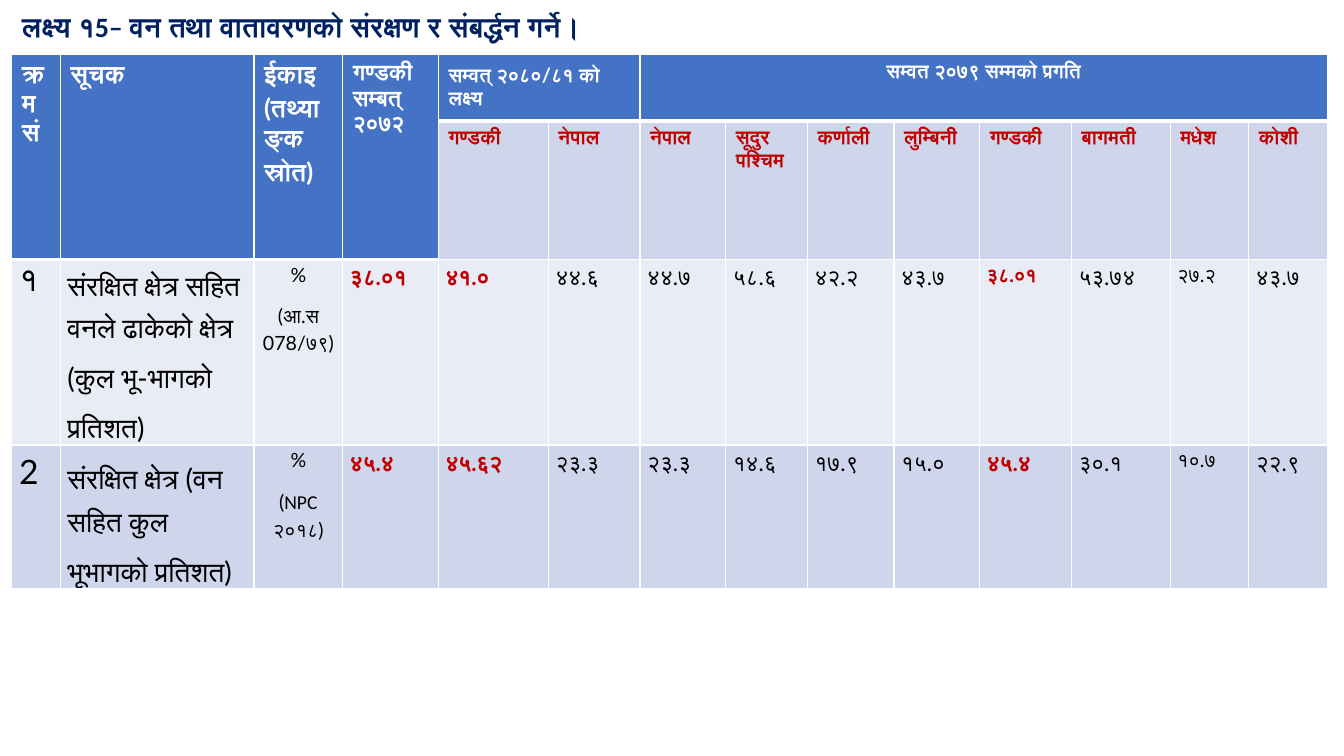
from lxml.etree import SubElement
from pptx import Presentation
from pptx.dml.color import RGBColor
from pptx.enum.text import PP_ALIGN
from pptx.oxml.ns import qn
from pptx.util import Cm, Pt

WHITE = RGBColor(0xFF, 0xFF, 0xFF)
BLACK = RGBColor(0x00, 0x00, 0x00)
NAVY = RGBColor(0x00, 0x20, 0x60)
RED = RGBColor(0xC0, 0x00, 0x00)
BLUE = RGBColor(0x44, 0x72, 0xC4)
BAND_LIGHT = RGBColor(0xE9, 0xEB, 0xF5)
BAND_DARK = RGBColor(0xCF, 0xD5, 0xEA)

TITLE = "लक्ष्य १5– वन तथा वातावरणको संरक्षण र संबर्द्धन गर्ने।"
COL_WIDTHS = [1.22, 4.88, 2.24, 2.41, 2.77, 2.31, 2.16,
              2.06, 2.18, 2.16, 2.31, 2.49, 1.98, 1.98]
ROW_HEIGHTS = [1.68, 3.49, 4.64, 3.6]
# column, last row, last column, size, text
HEADERS = [
    (0, 1, 0, 18, "क्रमसं"),
    (1, 1, 1, 18, "सूचक"),
    (2, 1, 2, 18, "ईकाइ (तथ्याङ्क स्रोत)"),
    (3, 1, 3, 16, "गण्डकी सम्बत् २०७२"),
    (4, 0, 5, 14, "सम्वत् २०८०/८१ को लक्ष्य"),
    (6, 0, 13, 14, "सम्वत २०७९ सम्मको प्रगति"),
]
PROVINCES = ["गण्डकी", "नेपाल", "नेपाल", "सूदुर पश्चिम", "कर्णाली",
             "लुम्बिनी", "गण्डकी", "बागमती", "मधेश", "कोशी"]
# number, indicator, unit paragraphs, values
INDICATORS = [
    ("१", "संरक्षित क्षेत्र सहित वनले ढाकेको क्षेत्र (कुल भू-भागको प्रतिशत)",
     ["%", "(आ.स 078/७९)"],
     ["३८.०१", "४१.०", "४४.६", "४४.७", "५८.६", "४२.२",
      "४३.७", "३८.०१", "५३.७४", "२७.२", "४३.७"]),
    ("2", "संरक्षित क्षेत्र (वन सहित कुल भूभागको प्रतिशत)",
     ["%", [("(", "Lato"), ("NPC", "Calibri"), (" २०१८)", "Lato")]],
     ["४५.४", "४५.६२", "२३.३", "२३.३", "१४.६", "१७.९",
      "१५.०", "४५.४", "३०.१", "१०.७", "२२.९"]),
]
GANDAKI_COLS = (3, 4, 10)
MADHESH_COL = 12


class SlideBuilder:
    para_format = {"line_spacing": 1.15, "space_after": Pt(10)}
    body_margins = {"margin_left": Cm(0.18), "margin_right": Cm(0.18),
                    "margin_top": 0, "margin_bottom": 0}

    def __init__(self, prs):
        self.s = prs.slides.add_slide(prs.slide_layouts[6])

    def fill_text(self, tf, paragraphs, size, color, bold=False, font="Lato", **para):
        """Fill tf; a paragraph is a string or a list of (text, font) runs."""
        tf.word_wrap = True
        for i, runs in enumerate(paragraphs):
            p = tf.add_paragraph() if i else tf.paragraphs[0]
            for name, value in {**self.para_format, **para}.items():
                setattr(p, name, value)
            for text, face in [(runs, font)] if isinstance(runs, str) else runs:
                r = p.add_run()
                r.text = text
                values = {"name": face, "size": Pt(size), "bold": bold}
                for name, value in values.items():
                    setattr(r.font, name, value)
                r.font.color.rgb = color

    def text(self, left, top, width, height, text, **style):
        sp = self.s.shapes.add_textbox(Cm(left), Cm(top), Cm(width), Cm(height))
        self.fill_text(sp.text_frame, [text], **style)

    def table(self, left, top, col_widths, row_heights):
        sp = self.s.shapes.add_table(
            len(row_heights), len(col_widths), Cm(left), Cm(top),
            Cm(sum(col_widths)), Cm(sum(row_heights)))
        for col, width in zip(sp.table.columns, col_widths):
            col.width = Cm(width)
        for row, height in zip(sp.table.rows, row_heights):
            row.height = Cm(height)
        return sp.table

    def paint(self, cell, fill, bottom=1):
        """Set the white borders, then the fill, in schema order."""
        tc_pr = cell._tc.get_or_add_tcPr()
        for side, width in {"L": 1, "R": 1, "T": 1, "B": bottom}.items():
            ln = SubElement(tc_pr, qn(f"a:ln{side}"), w=str(Pt(width)))
            solid = SubElement(ln, qn("a:solidFill"))
            SubElement(solid, qn("a:srgbClr"), val=str(WHITE))
        cell.fill.solid()
        cell.fill.fore_color.rgb = fill

    def body_cell(self, cell, paragraphs, size, color=BLACK, **style):
        for name, value in self.body_margins.items():
            setattr(cell, name, value)
        self.fill_text(cell.text_frame, paragraphs, size, color, **style)


def add_headers(b, table):
    for col, last_row, last_col, size, text in HEADERS:
        for r in range(last_row + 1):
            for c in range(col, last_col + 1):
                b.paint(table.cell(r, c), BLUE, bottom=3)
        cell = table.cell(0, col)
        cell.merge(table.cell(last_row, last_col))
        align = PP_ALIGN.CENTER if col == 6 else PP_ALIGN.LEFT
        b.fill_text(cell.text_frame, [text], size, WHITE, bold=True, alignment=align)
    for col, name in enumerate(PROVINCES, 4):
        cell = table.cell(1, col)
        b.paint(cell, BAND_DARK)
        b.fill_text(cell.text_frame, [name], 14, RED, bold=True)


def add_indicators(b, table):
    for row, (number, indicator, unit, values) in enumerate(INDICATORS, 2):
        for col in range(len(COL_WIDTHS)):
            b.paint(table.cell(row, col), BAND_DARK if row % 2 else BAND_LIGHT)
        b.body_cell(table.cell(row, 0), [number], 24)
        b.body_cell(table.cell(row, 1), [indicator], 20, line_spacing=1.5)
        b.body_cell(table.cell(row, 2), unit, 14, alignment=PP_ALIGN.CENTER)
        for col, value in enumerate(values, 3):
            own = col in GANDAKI_COLS
            small = col == MADHESH_COL or (row, col) == (2, 10)
            b.body_cell(table.cell(row, col), [value], 14 if small else 16,
                        RED if own else BLACK, bold=own)


def main():
    prs = Presentation()
    prs.slide_width, prs.slide_height = Cm(33.87), Cm(19.05)
    b = SlideBuilder(prs)
    table = b.table(0.3, 1.37, COL_WIDTHS, ROW_HEIGHTS)
    add_headers(b, table)
    add_indicators(b, table)
    b.text(0.3, 0, 33.02, 3.07, TITLE, size=20, color=NAVY, bold=True, font="Calibri")
    prs.save("out.pptx")


if __name__ == "__main__":
    main()
